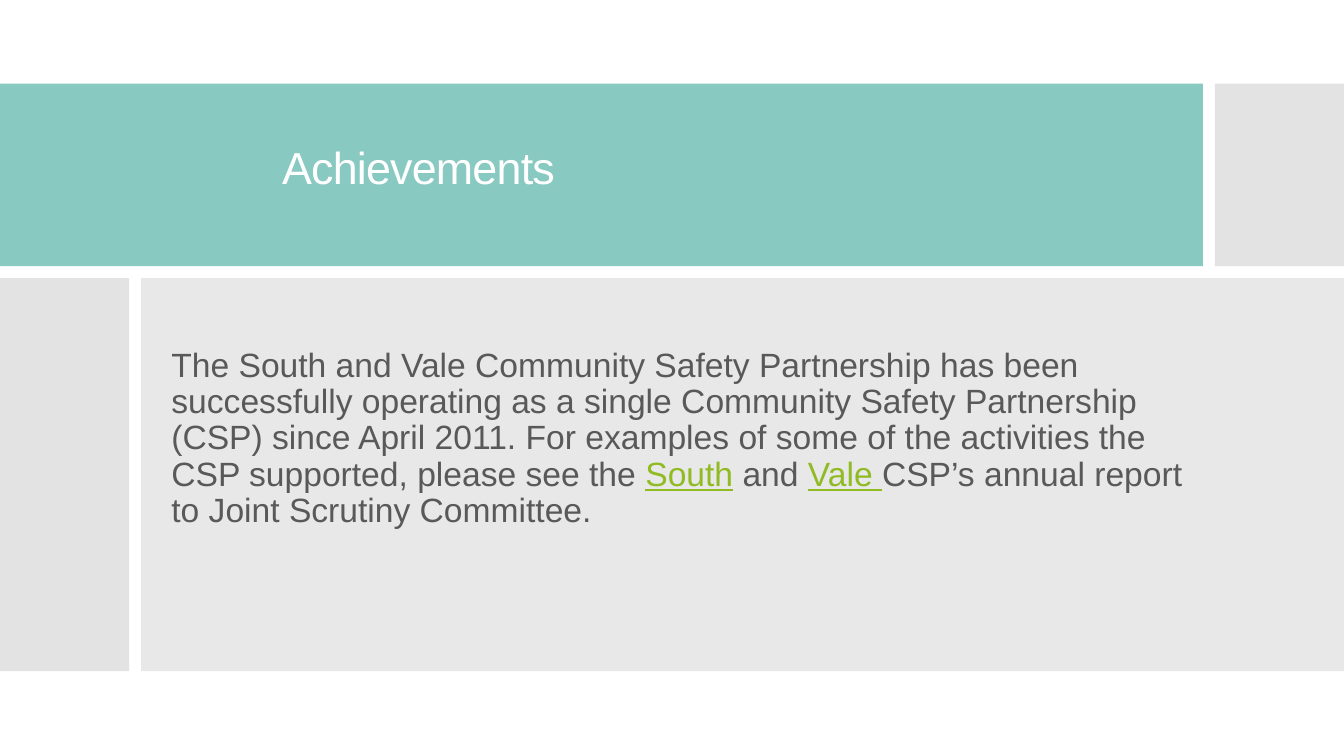
from dataclasses import dataclass

from lxml.etree import SubElement
from pptx import Presentation
from pptx.dml.color import RGBColor
from pptx.enum.shapes import MSO_SHAPE as Shape
from pptx.enum.text import MSO_ANCHOR as Anchor, MSO_AUTO_SIZE as AutoSize, PP_ALIGN as Align
from pptx.oxml.ns import qn
from pptx.util import Pt

EMU_PER_PX = 9144
PAGE_WIDTH, PAGE_HEIGHT = 1333, 750
GAP = 12


@dataclass(frozen=True)
class Theme:
    font: str = "Arial"
    banner: str = "88C9C1"
    accent_block: str = "C8C8C8"
    body_panel: str = "D9D9D9"
    title_text: str = "FFFFFF"
    body_text: str = "595959"
    link_text: str = "90BB23"
    title_size: int = 32
    body_size: int = 24


THEME = Theme()


def px(length):
    return length * EMU_PER_PX


def add_panel(page, box, color, opacity=100):
    panel = page.shapes.add_shape(Shape.RECTANGLE, *map(px, box))
    panel.shadow.inherit = False
    panel.line.fill.background()
    panel.fill.solid()
    panel.fill.fore_color.rgb = RGBColor.from_string(color)
    if opacity < 100:
        tint = panel.element.spPr.find(".//" + qn("a:srgbClr"))
        SubElement(tint, qn("a:alpha")).set("val", str(opacity * 1000))


def place_placeholder(holder, box, anchor):
    holder.left, holder.top, holder.width, holder.height = map(px, box)
    holder.element.getparent().append(holder.element)
    frame = holder.text_frame
    frame.word_wrap = True
    frame.auto_size = AutoSize.NONE
    frame.vertical_anchor = anchor
    frame.margin_left = frame.margin_right = px(10)
    frame.margin_top = frame.margin_bottom = px(5)
    para = frame.paragraphs[0]
    para.line_spacing = 0.9
    para.space_before = Pt(0)
    return frame, para


def add_span(para, text, size, color, underline=False):
    span = para.add_run()
    span.text = text
    span.font.name = THEME.font
    span.font.size = Pt(size)
    span.font.underline = underline
    span.font.color.rgb = RGBColor.from_string(color)
    return span


def build_header(page, box, text):
    left, top, width, height = box
    block_width = 128
    banner_width = width - block_width - GAP
    add_panel(page, (left, top, banner_width, height), THEME.banner)
    add_panel(page, (left + banner_width + GAP, top, block_width, height),
              THEME.accent_block, 50)
    frame, para = place_placeholder(
        page.shapes.title, (left + 140, top + 57, 550, 77), Anchor.TOP)
    para.alignment = Align.CENTER
    span = add_span(para, text, THEME.title_size, THEME.title_text)
    span.font._element.set("spc", "-60")


def build_body(page, box, parts):
    left, top, width, height = box
    block_width = 128
    panel_left = left + block_width + GAP
    add_panel(page, (left, top, block_width, height), THEME.accent_block, 50)
    add_panel(page, (panel_left, top, width - block_width - GAP, height),
              THEME.body_panel, 60)
    frame, para = place_placeholder(
        page.placeholders[1], (panel_left + 20, top + 24, 1045, 317), Anchor.MIDDLE)
    frame.margin_bottom = px(51)
    properties = para._p.get_or_add_pPr()
    properties.set("marL", "0")
    properties.set("indent", "0")
    SubElement(properties, qn("a:buNone"))
    para.alignment = Align.LEFT
    for text, is_link in parts:
        color = THEME.link_text if is_link else THEME.body_text
        add_span(para, text, THEME.body_size, color, is_link)


def main():
    deck = Presentation()
    deck.slide_width, deck.slide_height = px(PAGE_WIDTH), px(PAGE_HEIGHT)
    page = deck.slides.add_slide(deck.slide_layouts[1])
    header_top, header_height, body_height = 83, 181, 390
    build_header(page, (0, header_top, PAGE_WIDTH, header_height), "Achievements")
    build_body(page, (0, header_top + header_height + GAP, PAGE_WIDTH, body_height), [
        ("The South and Vale Community Safety Partnership has been successfully "
         "operating as a single Community Safety Partnership (CSP) since April 2011. "
         "For examples of some of the activities the CSP supported, please see the ", False),
        ("South", True),
        (" and ", False),
        ("Vale ", True),
        ("CSP’s annual report to Joint Scrutiny Committee.", False),
    ])
    deck.save("out.pptx")


if __name__ == "__main__":
    main()
